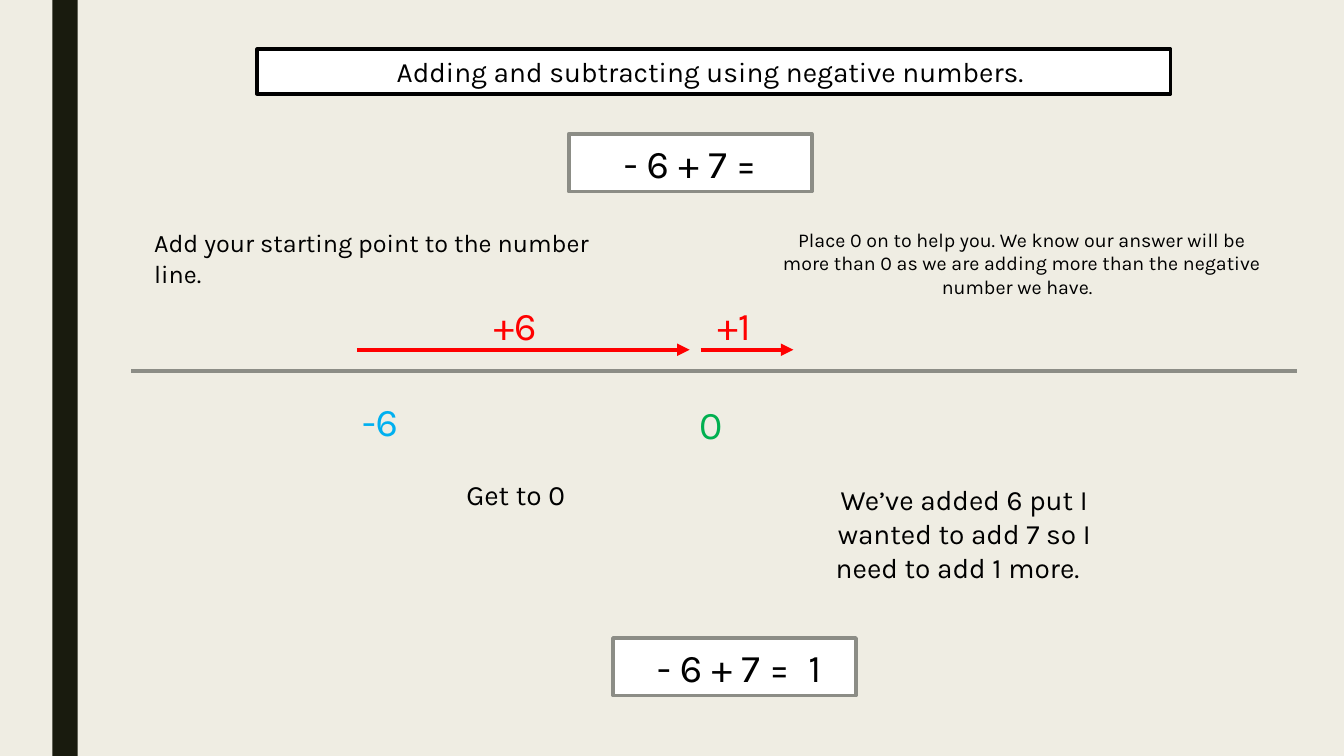
"""Build a number line slide on adding and subtracting with negative numbers."""
import lxml.etree
import pptx
import pptx.dml.color
import pptx.enum.shapes
import pptx.enum.text
import pptx.oxml.ns
import pptx.util

PX = 9144
THEME = {
    "font": "Karla",
    "paper": "EFEDE3", "band": "191B0E", "white": "FFFFFF", "black": "000000",
    "grey": "8C8D86", "red": "FF0000", "blue": "00B0F0", "green": "00B050",
    "sum": 28, "text": 20, "step": 18, "hint": 14,
    "frame": 2.75, "rule": 3,
}

SLIDE_SIZE = (1333, 750)
BAND = (52, 0, 25, 750)
TITLE = ("Adding and subtracting using negative numbers. ", (255, 49, 906, 44))
SUM_SIZE = (241, 57)
SUMS = [(" - 6 + 7 = ", 564, 133), (" - 6 + 7 =  1", 608, 633)]
NOTES = [
    ("Add your starting point to the number line.", (143, 221, 468, 67), "step", "LEFT"),
    ("Place 0 on to help you. We know our answer will be more than 0 "
     "as we are adding more than the negative number we have.  ",
     (759, 221, 509, 81), "hint", "CENTER"),
    ("Get to 0", (422, 469, 179, 44), "text", "CENTER"),
    ("We’ve added 6 put I wanted to add 7 so I need to add 1 more.  ",
     (804, 474, 305, 111), "text", "CENTER"),
]
LABEL_SIZE = (88, 57)
LABELS = [("-6", 333, 389, "blue"), ("0", 661, 392, "green"),
          ("+6", 467, 294, "red"), ("+1", 684, 294, "red")]
NUMBER_LINE = (130, 1286, 368)
JUMP_Y = 347
JUMPS = [(354, 684), (695, 787)]


def px(*lengths):
    return [pptx.util.Emu(n * PX) for n in lengths]


def color(name):
    return pptx.dml.color.RGBColor.from_string(THEME[name])


def write(sp, text, size, ink="black", align="CENTER"):
    tf = sp.text_frame
    tf.word_wrap = True
    tf.auto_size = pptx.enum.text.MSO_AUTO_SIZE.NONE
    tf.vertical_anchor = pptx.enum.text.MSO_ANCHOR.TOP
    p = tf.paragraphs[0]
    p.text = text
    p.alignment = pptx.enum.text.PP_ALIGN[align]
    p.font.name = THEME["font"]
    p.font.size = pptx.util.Pt(THEME[size])
    p.font.color.rgb = color(ink)


def frame(sp, ink):
    sp.fill.solid()
    sp.fill.fore_color.rgb = color("white")
    sp.line.color.rgb = color(ink)
    sp.line.width = pptx.util.Pt(THEME["frame"])


def add_rect(s, box):
    sp = s.shapes.add_shape(pptx.enum.shapes.MSO_SHAPE.RECTANGLE, *px(*box))
    sp.shadow.inherit = False
    return sp


def add_label(s, text, box, size, ink="black", align="CENTER"):
    write(s.shapes.add_textbox(*px(*box)), text, size, ink, align)


def add_line(s, x1, x2, y, ink, arrow=False):
    line = s.shapes.add_connector(
        pptx.enum.shapes.MSO_CONNECTOR.STRAIGHT, *px(x1, y, x2, y))
    line.line.color.rgb = color(ink)
    line.line.width = pptx.util.Pt(THEME["rule"])
    if arrow:
        lxml.etree.SubElement(line.line._get_or_add_ln(),
                              pptx.oxml.ns.qn("a:tailEnd"), type="triangle")
    lxml.etree.SubElement(line._element.spPr, pptx.oxml.ns.qn("a:effectLst"))


def main():
    prs = pptx.Presentation()
    prs.slide_width, prs.slide_height = px(*SLIDE_SIZE)
    s = prs.slides.add_slide(prs.slide_layouts[5])
    s.background.fill.solid()
    s.background.fill.fore_color.rgb = color("paper")

    text, box = TITLE
    title = s.shapes.title
    title.left, title.top, title.width, title.height = px(*box)
    frame(title, "black")
    write(title, text, "text")

    band = add_rect(s, BAND)
    band.fill.solid()
    band.fill.fore_color.rgb = color("band")
    band.line.fill.background()

    for text, x, y in SUMS:
        sp = add_rect(s, (x, y, *SUM_SIZE))
        frame(sp, "grey")
        write(sp, text, "sum")

    add_line(s, *NUMBER_LINE, "grey")
    for start, end in JUMPS:
        add_line(s, start, end, JUMP_Y, "red", arrow=True)
    for text, box, size, align in NOTES:
        add_label(s, text, box, size, align=align)
    for text, x, y, ink in LABELS:
        add_label(s, text, (x, y, *LABEL_SIZE), "sum", ink)

    prs.save("out.pptx")


if __name__ == "__main__":
    main()
